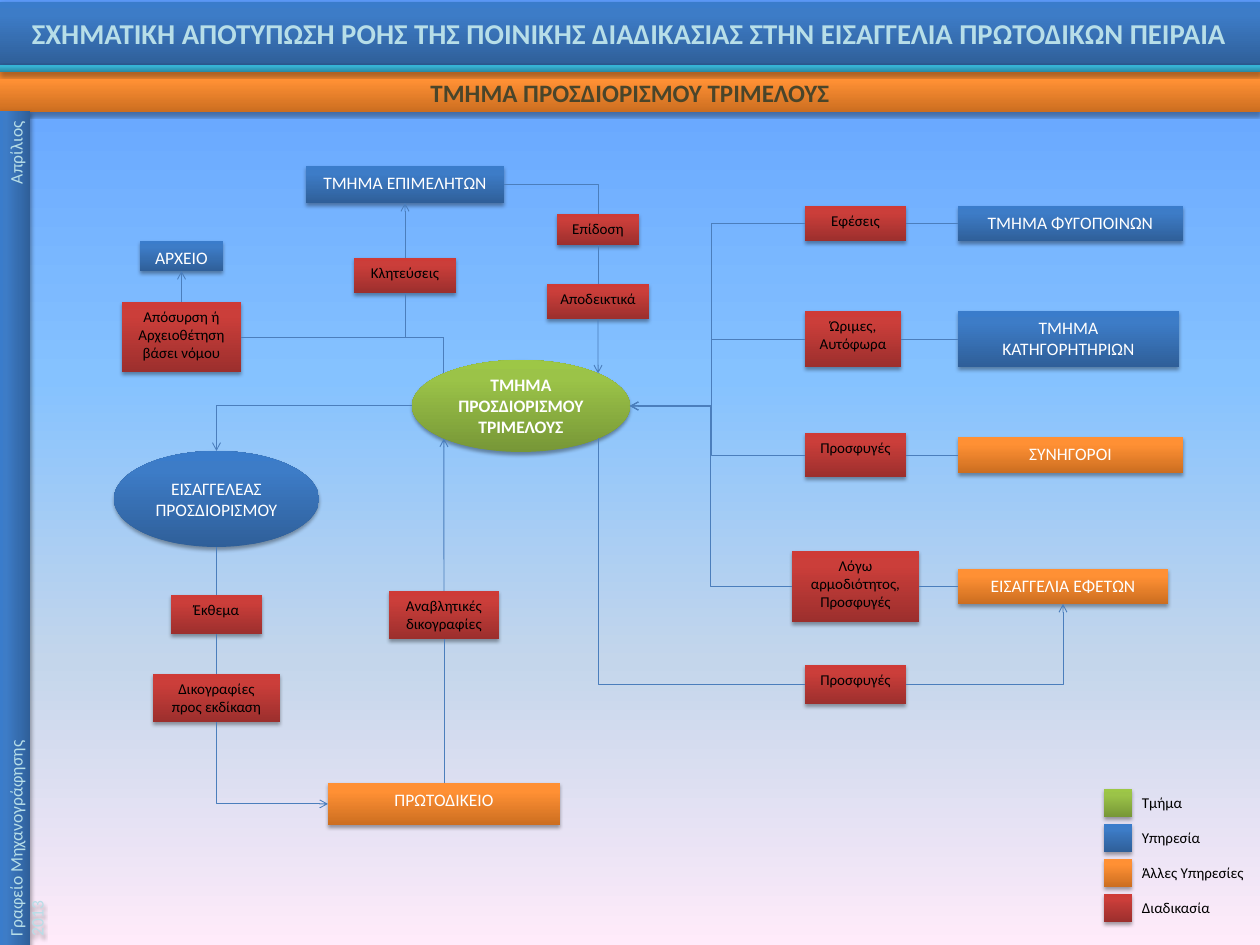
from dataclasses import dataclass
from math import cos, radians, sin

from lxml import etree
from pptx import Presentation
from pptx.dml.color import RGBColor
from pptx.enum.shapes import MSO_CONNECTOR, MSO_SHAPE
from pptx.enum.text import MSO_ANCHOR, MSO_AUTO_SIZE, PP_ALIGN
from pptx.oxml.ns import qn
from pptx.util import Emu, Pt

RECTANGLE, ELLIPSE = MSO_SHAPE.RECTANGLE, MSO_SHAPE.OVAL
STRAIGHT, ELBOW = MSO_CONNECTOR.STRAIGHT, MSO_CONNECTOR.ELBOW
LEFT, CENTER = PP_ALIGN.LEFT, PP_ALIGN.CENTER
TOP_ANCHOR, MIDDLE = MSO_ANCHOR.TOP, MSO_ANCHOR.MIDDLE
NO_AUTOFIT = MSO_AUTO_SIZE.NONE
TOP, SIDE_LEFT, BOTTOM, SIDE_RIGHT = range(4)
OVAL_TOP, OVAL_TOP_LEFT, OVAL_LEFT, OVAL_BOTTOM_LEFT = range(4)
OVAL_BOTTOM, OVAL_BOTTOM_RIGHT, OVAL_RIGHT, OVAL_TOP_RIGHT = range(4, 8)
SCALE = 10160


@dataclass(frozen=True)
class Theme:
    font = "Calibri"
    white, black = "FFFFFF", "000000"
    pale, brown, line = "B7DEE8", "4A452A", "4B7EBC"
    title, subtitle, body, small = 23, 20, 14, 12
    green = ((0, "779737"), (80, "9BC348"), (100, "9DC746"))
    blue = ((0, "2F5F99"), (80, "3D7CC7"), (100, "3A7CCB"))
    orange = ((0, "CC6E20"), (80, "FF9034"), (100, "FF9136"))
    red = ((0, "9C2F2D"), (80, "CB3E3A"), (100, "CE3B37"))
    teal = ((0, "2A88A2"), (80, "37B1D2"), (100, "34B4D6"))
    sky = ((0, "5E9EFF"), (40, "85C2FF"), (70, "C4D6EB"), (100, "FFEBFA"))


THEME = Theme()


def px(length):
    return Emu(round(length * SCALE))


def add_xml(parent, tag, **attributes):
    return etree.SubElement(parent, qn(tag), {key: str(value) for key, value in attributes.items()})


def set_gradient(fill, element, stops, angle):
    fill.gradient()
    fill.gradient_angle = angle
    stop_list = element.find(".//" + qn("a:gsLst"))
    for stop in list(stop_list):
        stop_list.remove(stop)
    for position, color in stops:
        add_xml(add_xml(stop_list, "a:gs", pos=position * 1000), "a:srgbClr", val=color)


def style_surface(shape, stops):
    """Gradient rising from dark to light, no outline, soft shadow below."""
    set_gradient(shape.fill, shape._element.spPr, stops, 90)
    shape.line.fill.background()
    shape.shadow.inherit = False
    effects = shape._element.spPr.find(qn("a:effectLst"))
    shadow = add_xml(effects, "a:outerShdw", blurRad=Pt(3.1), dist=Pt(1.8), dir=5400000, rotWithShape=0)
    add_xml(add_xml(shadow, "a:srgbClr", val=THEME.black), "a:alpha", val=35000)


def write_text(shape, text, size=THEME.body, color=THEME.white, bold=False,
               align=CENTER, anchor=TOP_ANCHOR, insets=(9, 5), tab=None):
    frame = shape.text_frame
    frame.word_wrap = True
    frame.auto_size = NO_AUTOFIT
    frame.vertical_anchor = anchor
    frame.margin_left = frame.margin_right = px(insets[0])
    frame.margin_top = frame.margin_bottom = px(insets[1])
    frame.text = text
    for paragraph in frame.paragraphs:
        paragraph.alignment = align
        if tab:
            tabs = add_xml(paragraph._p.get_or_add_pPr(), "a:tabLst")
            add_xml(tabs, "a:tab", pos=px(tab), algn="r")
        font = paragraph.font
        font.name, font.size, font.bold = THEME.font, Pt(size), bold
        font.color.rgb = RGBColor.from_string(color)


def add_surface(slide, box, stops, text="", kind=RECTANGLE, **text_format):
    shape = slide.shapes.add_shape(kind, *map(px, box))
    style_surface(shape, stops)
    if text:
        write_text(shape, text, **text_format)
    return shape


def add_service(slide, box, text, stops=THEME.blue):
    return add_surface(slide, box, stops, text, insets=(13, 6))


def add_process(slide, box, text):
    return add_surface(slide, box, THEME.red, text, size=THEME.small, color=THEME.black, insets=(9, 6))


def site_count(shape):
    return 8 if shape.auto_shape_type == ELLIPSE else 4


def site_point(shape, site):
    """Connection sites run counterclockwise from the top."""
    angle = radians(90 + 360 / site_count(shape) * site)
    return (round(shape.left + shape.width / 2 * (1 + cos(angle))),
            round(shape.top + shape.height / 2 * (1 - sin(angle))))


def glue(connector, shape, site, at_end):
    if site_count(shape) == 4:
        (connector.end_connect if at_end else connector.begin_connect)(shape, site)
    else:
        parent = connector._element.nvCxnSpPr.cNvCxnSpPr
        add_xml(parent, "a:endCxn" if at_end else "a:stCxn", id=shape.shape_id, idx=site)


def style_connector(connector, arrow=None):
    connector.line.color.rgb = RGBColor.from_string(THEME.line)
    connector.line.width = Pt(0.75)
    if arrow:
        add_xml(connector.line._get_or_add_ln(), f"a:{arrow}End", type="arrow")
    add_xml(connector._element.spPr, "a:effectLst")


def set_bend(connector, ratio):
    guides = connector._element.spPr.prstGeom.get_or_add_avLst()
    add_xml(guides, "a:gd", name="adj1", fmla=f"val {round(ratio * 100000)}")


def connect(slide, start, start_site, end, end_site, arrow=None, corner=False, bend_x=None):
    """Straight by default; a corner leaves its start horizontally; bend_x places a middle leg."""
    start_point, end_point = site_point(start, start_site), site_point(end, end_site)
    kind = ELBOW if corner or bend_x else STRAIGHT
    connector = slide.shapes.add_connector(kind, *start_point, *end_point)
    if corner:
        connector._element.spPr.prstGeom.set("prst", "bentConnector2")
    if bend_x:
        set_bend(connector, (start_point[0] - px(bend_x)) / (start_point[0] - end_point[0]))
    glue(connector, start, start_site, False)
    glue(connector, end, end_site, True)
    style_connector(connector, arrow)


def connect_upright(slide, start, start_site, end, end_site, ratio):
    """Elbow that leaves and arrives vertically, running up and to the left."""
    (start_x, start_y), (end_x, end_y) = site_point(start, start_site), site_point(end, end_site)
    middle_x, middle_y = (start_x + end_x) // 2, (start_y + end_y) // 2
    run, rise = (start_y - end_y) // 2, (start_x - end_x) // 2
    connector = slide.shapes.add_connector(ELBOW, middle_x - run, middle_y + rise,
                                           middle_x + run, middle_y - rise)
    connector._element.spPr.xfrm.set("rot", "16200000")
    set_bend(connector, ratio)
    parent = connector._element.nvCxnSpPr.cNvCxnSpPr
    add_xml(parent, "a:stCxn", id=start.shape_id, idx=start_site)
    add_xml(parent, "a:endCxn", id=end.shape_id, idx=end_site)
    style_connector(connector)


def add_frame(slide):
    title = slide.shapes.title
    title.left, title.top, title.width, title.height = map(px, (0, 2, 1260, 63))
    style_surface(title, THEME.blue)
    write_text(title, "ΣΧΗΜΑΤΙΚΗ ΑΠΟΤΥΠΩΣΗ ΡΟΗΣ ΤΗΣ ΠΟΙΝΙΚΗΣ ΔΙΑΔΙΚΑΣΙΑΣ ΣΤΗΝ ΕΙΣΑΓΓΕΛΙΑ ΠΡΩΤΟΔΙΚΩΝ ΠΕΙΡΑΙΑ",
               size=THEME.title, color=THEME.pale, bold=True, anchor=MIDDLE, insets=(13, 6))
    add_surface(slide, (0, 72, 1260, 40), THEME.orange, "ΤΜΗΜΑ ΠΡΟΣΔΙΟΡΙΣΜΟΥ ΤΡΙΜΕΛΟΥΣ",
                size=THEME.subtitle, color=THEME.brown, bold=True)
    sidebar = add_surface(slide, (-402, 513, 834, 30), THEME.blue,
                          "Γραφείο Μηχανογράφησης\tΑπρίλιος\n2013", color=THEME.pale, align=LEFT, tab=815)
    sidebar.rotation = 270
    add_surface(slide, (0, 65, 1260, 7), THEME.teal)


def add_legend(slide):
    entries = (("Τμήμα", THEME.green), ("Υπηρεσία", THEME.blue),
               ("Άλλες Υπηρεσίες", THEME.orange), ("Διαδικασία", THEME.red))
    for row, (label, stops) in enumerate(entries):
        top = 789 + 35 * row
        add_surface(slide, (1104, top, 28, 28), stops)
        caption = slide.shapes.add_textbox(*map(px, (1133, top, 127, 27)))
        write_text(caption, label, size=THEME.small, color=THEME.black, align=LEFT)


def add_right_side(slide, department):
    branches = (
        ((805, 206, 101, 35), "Εφέσεις", (958, 206, 225, 35), "ΤΜΗΜΑ ΦΥΓΟΠΟΙΝΩΝ", THEME.blue),
        ((805, 311, 96, 56), "Ώριμες,\nΑυτόφωρα", (958, 311, 221, 56), "ΤΜΗΜΑ ΚΑΤΗΓΟΡΗΤΗΡΙΩΝ", THEME.blue),
        ((805, 433, 101, 44), "Προσφυγές", (958, 437, 225, 36), "ΣΥΝΗΓΟΡΟΙ", THEME.orange),
        ((792, 551, 127, 71), "Λόγω\nαρμοδιότητος,\nΠροσφυγές", (958, 569, 210, 35),
         "ΕΙΣΑΓΓΕΛΙΑ ΕΦΕΤΩΝ", THEME.orange),
    )
    for process_box, process_text, service_box, service_text, stops in branches:
        process = add_process(slide, process_box, process_text)
        service = add_service(slide, service_box, service_text, stops)
        connect(slide, service, SIDE_LEFT, process, SIDE_RIGHT)
        connect(slide, process, SIDE_LEFT, department, OVAL_RIGHT, arrow="tail", bend_x=711)
    appeal = add_process(slide, (805, 665, 101, 39), "Προσφυγές")
    connect(slide, appeal, SIDE_LEFT, department, OVAL_BOTTOM_RIGHT, corner=True)
    connect(slide, appeal, SIDE_RIGHT, service, BOTTOM, arrow="tail", corner=True)


def add_left_side(slide, department):
    prosecutor = add_surface(slide, (114, 451, 205, 96), THEME.blue, "ΕΙΣΑΓΓΕΛΕΑΣ ΠΡΟΣΔΙΟΡΙΣΜΟΥ",
                             kind=ELLIPSE, anchor=MIDDLE)
    docket = add_process(slide, (171, 595, 91, 39), "Έκθεμα")
    trial_files = add_process(slide, (153, 674, 127, 48), "Δικογραφίες\nπρος εκδίκαση")
    court = add_service(slide, (328, 783, 232, 42), "ΠΡΩΤΟΔΙΚΕΙΟ", THEME.orange)
    adjourned = add_process(slide, (389, 591, 110, 48), "Αναβλητικές\nδικογραφίες")
    connect(slide, department, OVAL_LEFT, prosecutor, OVAL_TOP, arrow="tail", corner=True)
    connect(slide, prosecutor, OVAL_BOTTOM, docket, TOP)
    connect(slide, docket, BOTTOM, trial_files, TOP)
    connect(slide, court, SIDE_LEFT, trial_files, BOTTOM, arrow="head", corner=True)
    connect(slide, court, TOP, adjourned, BOTTOM)
    connect(slide, adjourned, TOP, department, OVAL_BOTTOM_LEFT, arrow="tail")


def add_upper_side(slide, department):
    bailiffs = add_service(slide, (306, 166, 198, 37), "ΤΜΗΜΑ ΕΠΙΜΕΛΗΤΩΝ")
    summons = add_process(slide, (354, 258, 102, 35), "Κλητεύσεις")
    service = add_process(slide, (557, 214, 82, 31), "Επίδοση")
    receipts = add_process(slide, (547, 284, 102, 35), "Αποδεικτικά")
    archive = add_service(slide, (140, 241, 83, 30), "ΑΡΧΕΙΟ")
    withdrawal = add_process(slide, (122, 302, 119, 70), "Απόσυρση ή\nΑρχειοθέτηση\nβάσει νόμου")
    connect_upright(slide, department, OVAL_TOP_LEFT, summons, TOP + BOTTOM, 0.45)
    connect(slide, summons, TOP, bailiffs, BOTTOM, arrow="tail")
    connect(slide, bailiffs, SIDE_RIGHT, service, TOP, corner=True)
    connect(slide, service, BOTTOM, receipts, TOP)
    connect(slide, receipts, BOTTOM, department, OVAL_TOP_RIGHT, arrow="tail")
    connect(slide, withdrawal, SIDE_RIGHT, department, OVAL_TOP_LEFT, corner=True)
    connect(slide, withdrawal, TOP, archive, BOTTOM, arrow="tail")


def main():
    presentation = Presentation()
    presentation.slide_width, presentation.slide_height = px(1260), px(945)
    slide = presentation.slides.add_slide(presentation.slide_layouts[5])
    set_gradient(slide.background.fill, slide._element, THEME.sky, 270)
    add_frame(slide)
    department = add_surface(slide, (412, 360, 218, 92), THEME.green, "ΤΜΗΜΑ ΠΡΟΣΔΙΟΡΙΣΜΟΥ ΤΡΙΜΕΛΟΥΣ",
                             kind=ELLIPSE, bold=True, anchor=MIDDLE)
    add_right_side(slide, department)
    add_left_side(slide, department)
    add_upper_side(slide, department)
    add_legend(slide)
    presentation.save("out.pptx")


if __name__ == "__main__":
    main()
